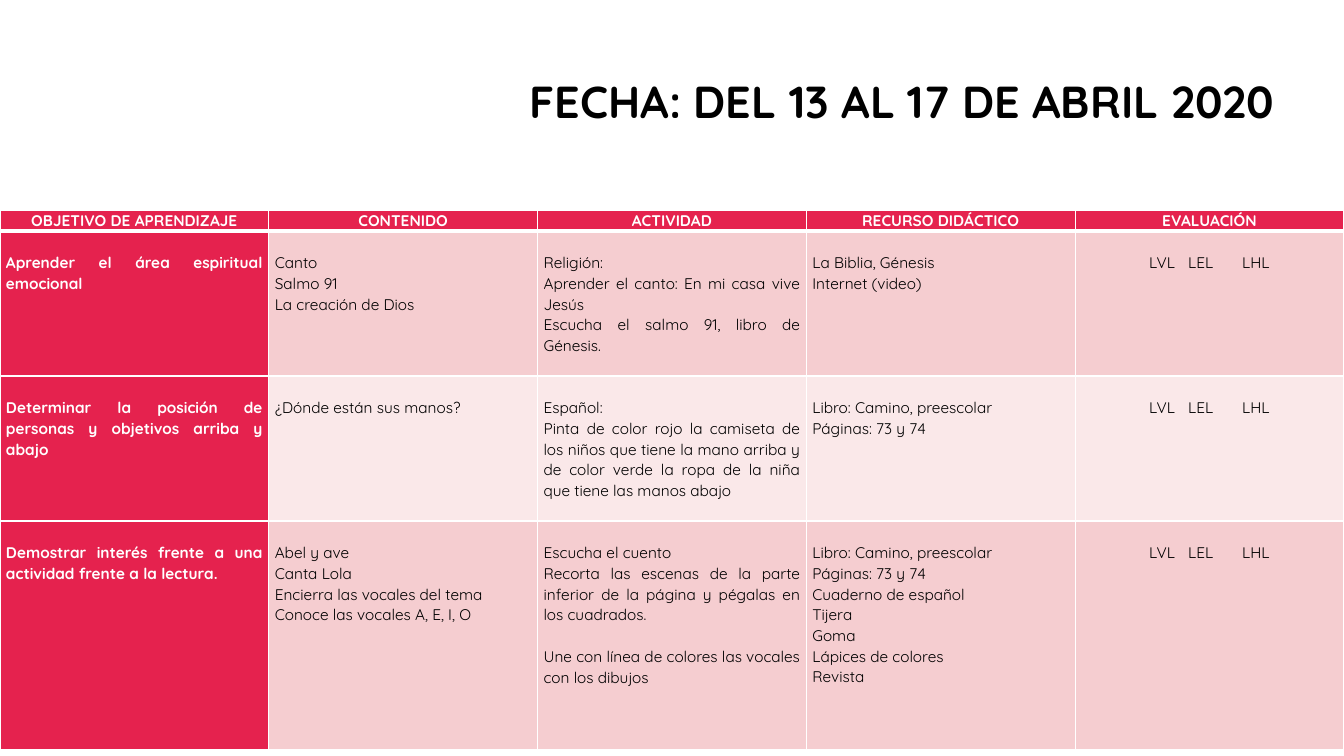
from dataclasses import dataclass

from lxml import etree
from pptx import Presentation
from pptx.dml.color import RGBColor
from pptx.enum.text import MSO_ANCHOR, PP_ALIGN
from pptx.oxml.ns import qn
from pptx.util import Pt

CENTER, JUSTIFY, LEFT = PP_ALIGN.CENTER, PP_ALIGN.JUSTIFY, PP_ALIGN.LEFT
TOP = MSO_ANCHOR.TOP
SCALE = 914400 / 100.8


@dataclass(frozen=True)
class Theme:
    """Hold the colours, font and type sizes of the slide."""
    font: str = "Quicksand"
    red: str = "E5224E"
    rose: str = "F5CDD0"
    pale: str = "FAE8E9"
    white: str = "FFFFFF"
    black: str = "000000"
    title: int = 32
    body: int = 11
    gap: int = 15
    thin: int = 1
    thick: int = 3


THEME = Theme()
WIDE, HIGH = 1344, 756
ROWS = [21, 145, 145, 229]
STOPS = [68, 107, 161]
MARKS = ["LVL", "LEL", "LHL"]
TITLE = "FECHA: DEL 13 AL 17 DE ABRIL 2020 "
HEADS = ["OBJETIVO DE APRENDIZAJE", "CONTENIDO", "ACTIVIDAD",
         "RECURSO DIDÁCTICO", "EVALUACIÓN"]
BOOK = ["Libro: Camino, preescolar ", "Páginas: 73 y 74"]
PLANS = [
    [["Aprender el área espiritual emocional "],
     ["Canto", "Salmo 91", "La creación de Dios "],
     ["Religión: ", "Aprender el canto: En mi casa vive Jesús ",
      "Escucha el salmo 91, libro de Génesis. "],
     ["La Biblia, Génesis ", "Internet (video)"]],
    [["Determinar la posición de personas y objetivos arriba y abajo "],
     ["¿Dónde están sus manos? "],
     ["Español:",
      "Pinta de color rojo la camiseta de los niños que tiene la mano arriba "
      "y de color verde la ropa de la niña que tiene las manos abajo "],
     BOOK],
    [["Demostrar interés frente a una actividad frente a la lectura. "],
     ["Abel y ave ", "Canta Lola ", "Encierra las vocales del tema ",
      "Conoce las vocales A, E, I, O "],
     ["Escucha el cuento ",
      "Recorta las escenas de la parte inferior de la página y pégalas "
      "en los cuadrados. ",
      "Une con línea de colores las vocales con los dibujos "],
     BOOK + ["Cuaderno de español ", "Tijera", "Goma ",
             "Lápices de colores ", "Revista "]],
]
SPACED = "Une con"


def px(count):
    """Turn whole pixels into EMU."""
    return round(count * SCALE)


def add_line(para, text, size, color, bold, align, pitch):
    """Write one run into a paragraph with its style."""
    para.alignment = align
    para.line_spacing = pitch
    run = para.add_run()
    run.text = text
    run.font.name = THEME.font
    run.font.size = Pt(size)
    run.font.bold = bold
    run.font.color.rgb = RGBColor.from_string(color)


def add_tabs(para):
    """Set the tab stops for the grading marks."""
    tabs = etree.SubElement(para._p.get_or_add_pPr(), qn("a:tabLst"))
    for stop in STOPS:
        etree.SubElement(tabs, qn("a:tab"), pos=str(px(stop)), algn="l")


def add_edges(cell, row):
    """Draw white borders, thick between the header and the body."""
    props = cell._tc.get_or_add_tcPr()
    for side in "LRTB":
        heavy = (row, side) in [(0, "B"), (1, "T")]
        width = Pt(THEME.thick if heavy else THEME.thin)
        line = etree.SubElement(props, qn("a:ln" + side), w=str(width))
        fill = etree.SubElement(line, qn("a:solidFill"))
        etree.SubElement(fill, qn("a:srgbClr"), val=THEME.white)


def fill_cell(cell, row, col, lines):
    """Style one cell and write its lines."""
    head, marks = row == 0, row > 0 and col == len(HEADS) - 1
    strong = head or col == 0
    add_edges(cell, row)
    cell.fill.solid()
    shade = THEME.red if strong else THEME.rose if row % 2 else THEME.pale
    cell.fill.fore_color.rgb = RGBColor.from_string(shade)
    cell.margin_left = cell.margin_right = px(6)
    cell.margin_top = 0 if head else px(21)
    cell.margin_bottom = 0
    cell.vertical_anchor = TOP
    frame = cell.text_frame
    align = CENTER if head else LEFT if marks else JUSTIFY
    for index, text in enumerate(lines):
        para = frame.add_paragraph() if index else frame.paragraphs[0]
        if marks:
            add_tabs(para)
        if text.startswith(SPACED):
            para.space_before = Pt(THEME.gap)
        color = THEME.white if strong else THEME.black
        add_line(para, text, THEME.body, color, strong, align, 1.07)


def add_title(slide, left, top, width, height):
    """Place the date heading in its box."""
    box = slide.shapes.add_textbox(px(left), px(top), px(width), px(height))
    frame = box.text_frame
    frame.word_wrap = True
    add_line(frame.paragraphs[0], TITLE, THEME.title, THEME.black, True,
             CENTER, 0.9)


def add_plan(slide, left, top, width, heights):
    """Place the weekly plan table in its box."""
    count = len(HEADS)
    table = slide.shapes.add_table(len(heights), count, px(left), px(top),
                                   px(width), px(sum(heights))).table
    table.first_row = table.horz_banding = False
    for column in table.columns:
        column.width = px(width) // count
    marks = ["".join("\t" + mark for mark in MARKS)]
    grid = [[[head] for head in HEADS]] + [plan + [marks] for plan in PLANS]
    for row, cells in enumerate(grid):
        table.rows[row].height = px(heights[row])
        for col, lines in enumerate(cells):
            fill_cell(table.cell(row, col), row, col, lines)


def main():
    """Build the slide and save it."""
    deck = Presentation()
    deck.slide_width, deck.slide_height = px(WIDE), px(HIGH)
    slide = deck.slides.add_slide(deck.slide_layouts[6])
    add_title(slide, 393, 75, 1031, 69)
    add_plan(slide, 0, 210, WIDE, ROWS)
    deck.save("out.pptx")


if __name__ == "__main__":
    main()
